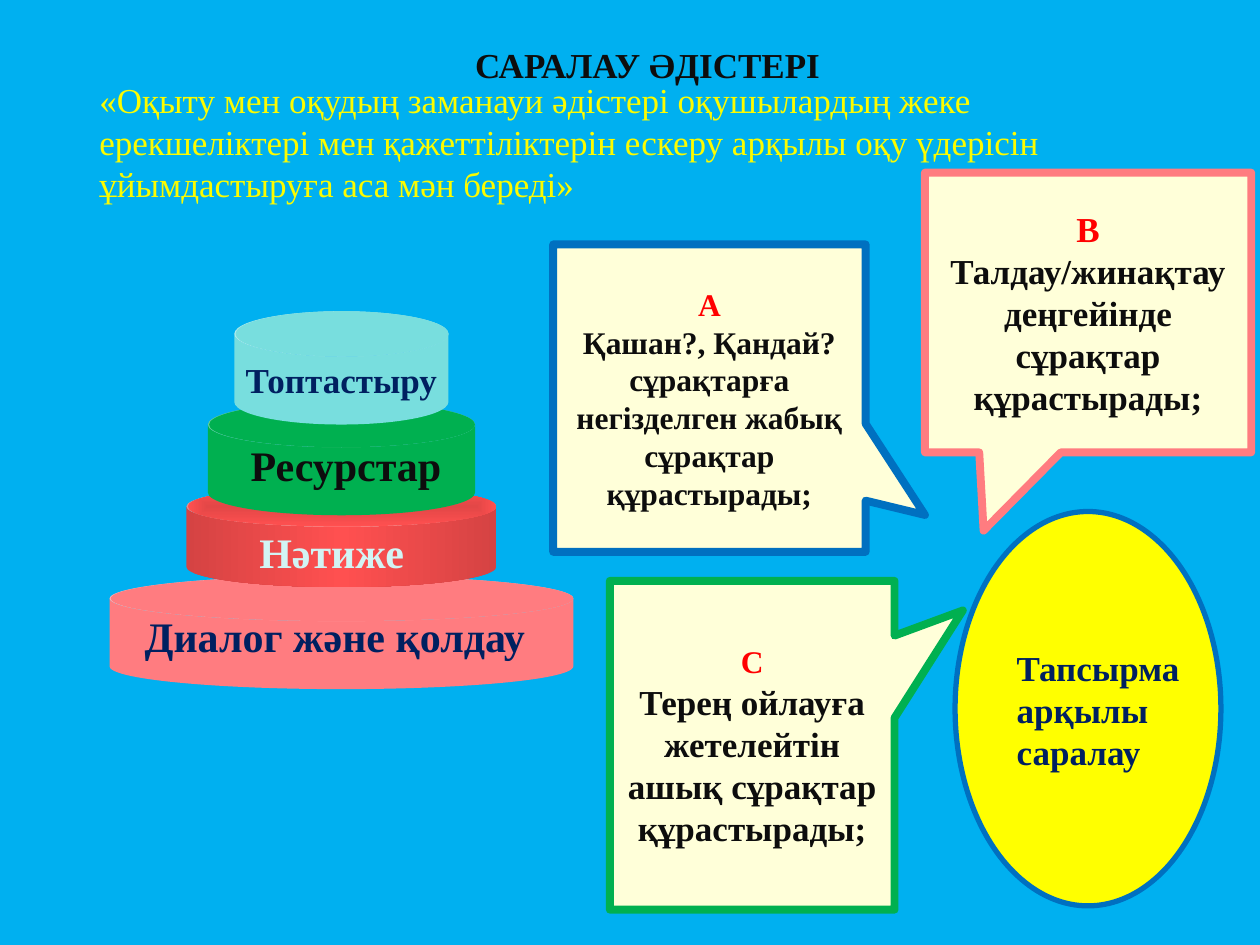
from dataclasses import dataclass
from typing import NamedTuple, Optional

from pptx import Presentation
from pptx.dml.color import RGBColor
from pptx.enum.shapes import MSO_SHAPE as Preset
from pptx.enum.text import MSO_ANCHOR as Anchor, PP_ALIGN as Align
from pptx.oxml import parse_xml
from pptx.oxml.ns import nsdecls
from pptx.util import Inches, Pt

COLUMNS, ROWS = 100, 75
CELL = Inches(0.1)
RIM_SHARE = 0.4
STACK_CENTRE = 27.1


@dataclass(frozen=True)
class Theme:
    font: str = "Times New Roman"
    background: str = "00B0F0"
    ink: str = "0D0D0D"
    navy: str = "002060"
    quote: str = "FCFC00"
    red: str = "FF0000"
    ice: str = "D2F4F4"
    pink: str = "FF7C80"
    green: str = "00B050"
    aqua: str = "78DEDE"
    blue: str = "0070C0"
    cream: str = "FFFFD9"
    yellow: str = "FFFF00"
    small: int = 18
    body: int = 20
    large: int = 24
    thin: float = 3
    thick: float = 4.5


THEME = Theme()


class Box(NamedTuple):
    """Left, top, width and height in grid cells."""
    left: float
    top: float
    width: float
    height: float


class Gradient(NamedTuple):
    stops: tuple
    direction: str


class Tier(NamedTuple):
    top: float
    width: float
    height: float
    side: "str | Gradient"
    rim: "str | Gradient"


class Label(NamedTuple):
    text: str
    box: Box
    color: str


class Callout(NamedTuple):
    letter: str
    text: str
    box: Box
    tip: tuple
    outline: str
    letter_size: int
    text_size: int


ACROSS = '<a:lin ang="0" scaled="0"/>'
FROM_CENTRE = ('<a:path path="shape"><a:fillToRect l="50000" t="50000" '
               'r="50000" b="50000"/></a:path>')
RED_SIDE = Gradient(((0, "D54343"), (50, "FF5050"), (100, "D54343")), ACROSS)
RED_RIM = Gradient(((0, "E34747"), (100, "FF5050")), FROM_CENTRE)

TIERS = [
    Tier(45.7, 36.8, 9, THEME.pink, THEME.pink),
    Tier(38.6, 24.6, 8, RED_SIDE, RED_RIM),
    Tier(31.9, 21.2, 9, THEME.green, THEME.green),
    Tier(24.7, 17, 9, THEME.aqua, THEME.aqua),
]
TOP_LABEL = "Топтастыру"
LABELS = [
    Label("Ресурстар", Box(18.9, 34.4, 18.6, 5), THEME.ink),
    Label("Нәтиже", Box(19.6, 41.3, 17.9, 5), THEME.ice),
    Label("Диалог және қолдау", Box(10.5, 48, 33, 5), THEME.navy),
]
CALLOUTS = [
    Callout("С", "Терең ойлауға жетелейтін ашық сұрақтар құрастырады;",
            Box(48.4, 46.1, 22.6, 26.1), (0.74, -0.41), THEME.green,
            THEME.small, THEME.body),
    Callout("А", "Қашан?, Қандай? сұрақтарға негізделген жабық сұрақтар құрастырады;",
            Box(43.9, 19.4, 24.8, 24.4), (0.69, 0.38), THEME.blue,
            THEME.small, THEME.small),
    Callout("В", "Талдау/жинақтау деңгейінде сұрақтар құрастырады;",
            Box(73.4, 13.7, 25.9, 22.2), (-0.32, 0.78), THEME.pink,
            THEME.body, THEME.body),
]


def to_lengths(box: Box) -> list:
    return [round(cells * CELL) for cells in box]


def write(frame, text: str, *, color: str, size: int = THEME.body,
          bold: bool = True, align=Align.LEFT, wrap: bool = True,
          anchor=Anchor.TOP, append: bool = False) -> None:
    """Put each line of text in its own paragraph of the frame."""
    frame.word_wrap = wrap
    frame.vertical_anchor = anchor
    for index, line in enumerate(text.split("\n")):
        first = index == 0 and not append
        paragraph = frame.paragraphs[0] if first else frame.add_paragraph()
        paragraph.alignment = align
        run = paragraph.add_run()
        run.text = line
        run.font.name = THEME.font
        run.font.size = Pt(size)
        run.font.bold = bold
        run.font.color.rgb = RGBColor.from_string(color)


def add_label(slide, text: str, box: Box, **text_format) -> None:
    write(slide.shapes.add_textbox(*to_lengths(box)).text_frame, text, **text_format)


def paint_gradient(shape, gradient: Gradient) -> None:
    stops = "".join(
        f'<a:gs pos="{position * 1000}"><a:srgbClr val="{color}"/></a:gs>'
        for position, color in gradient.stops)
    fill = parse_xml(f'<a:gradFill {nsdecls("a")} rotWithShape="1">'
                     f'<a:gsLst>{stops}</a:gsLst>{gradient.direction}</a:gradFill>')
    shape.element.spPr.find(fill.tag.replace("gradFill", "prstGeom")).addnext(fill)


def add_figure(slide, preset, box: Box, fill: "str | Gradient",
               outline: Optional[str] = None, weight: float = THEME.thin):
    shape = slide.shapes.add_shape(preset, *to_lengths(box))
    shape.shadow.inherit = False
    if isinstance(fill, Gradient):
        paint_gradient(shape, fill)
    else:
        shape.fill.solid()
        shape.fill.fore_color.rgb = RGBColor.from_string(fill)
    if outline:
        shape.line.color.rgb = RGBColor.from_string(outline)
        shape.line.width = Pt(weight)
    else:
        shape.line.fill.background()
    return shape


def add_tier(slide, tier: Tier):
    left = STACK_CENTRE - tier.width / 2
    can = add_figure(slide, Preset.CAN,
                     Box(left, tier.top, tier.width, tier.height), tier.side)
    can.adjustments[0] = RIM_SHARE
    add_figure(slide, Preset.OVAL,
               Box(left + 0.1, tier.top, tier.width - 0.1, tier.height * RIM_SHARE),
               tier.rim)
    return can


def add_callout(slide, callout: Callout) -> None:
    shape = add_figure(slide, Preset.RECTANGULAR_CALLOUT, callout.box,
                       THEME.cream, callout.outline, THEME.thick)
    shape.adjustments[0], shape.adjustments[1] = callout.tip
    centred = dict(align=Align.CENTER, anchor=Anchor.MIDDLE)
    write(shape.text_frame, callout.letter, color=THEME.red,
          size=callout.letter_size, **centred)
    write(shape.text_frame, callout.text, color=THEME.ink,
          size=callout.text_size, append=True, **centred)


def main() -> None:
    presentation = Presentation()
    presentation.slide_width = COLUMNS * CELL
    presentation.slide_height = ROWS * CELL
    slide = presentation.slides.add_slide(presentation.slide_layouts[6])
    slide.background.fill.solid()
    slide.background.fill.fore_color.rgb = RGBColor.from_string(THEME.background)

    add_label(slide, "САРАЛАУ ӘДІСТЕРІ", Box(12.9, 3, 77, 4.4),
              color=THEME.ink, align=Align.CENTER)
    add_label(slide, "«Оқыту мен оқудың заманауи әдістері оқушылардың жеке "
              "ерекшеліктері мен қажеттіліктерін ескеру арқылы оқу үдерісін "
              "ұйымдастыруға аса мән береді»", Box(6.9, 5.7, 80.9, 14.1),
              color=THEME.quote, bold=False)

    cans = [add_tier(slide, tier) for tier in TIERS]
    write(cans[-1].text_frame, TOP_LABEL, color=THEME.navy,
          align=Align.CENTER, anchor=Anchor.MIDDLE, wrap=False)
    for label in LABELS:
        add_label(slide, label.text, label.box, color=label.color, size=THEME.large)

    add_figure(slide, Preset.OVAL, Box(75.8, 40.6, 21.1, 31.3),
               THEME.yellow, THEME.blue)
    add_label(slide, "Тапсырма\nарқылы\nсаралау", Box(79.7, 50.8, 16.2, 11.3),
              color=THEME.navy)
    for callout in CALLOUTS:
        add_callout(slide, callout)
    presentation.save("out.pptx")


if __name__ == "__main__":
    main()
